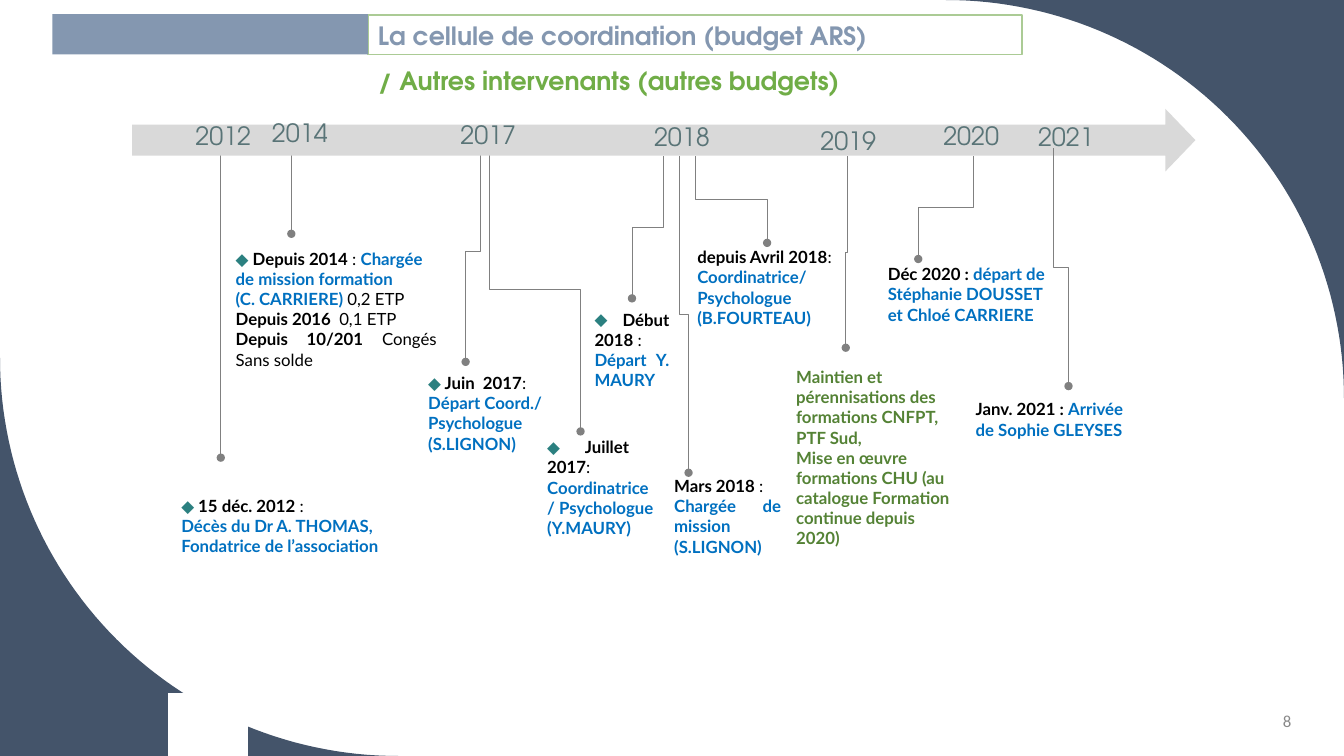
from dataclasses import dataclass
from enum import Enum
from math import cos, pi, sin

from lxml.etree import SubElement
from pptx import Presentation
from pptx.dml.color import RGBColor as RGB
from pptx.enum.shapes import MSO_CONNECTOR as Link, MSO_SHAPE as Preset
from pptx.enum.text import MSO_ANCHOR as Anchor, MSO_AUTO_SIZE as Fit, PP_ALIGN as Align
from pptx.oxml.ns import qn
from pptx.shapes.autoshape import Shape
from pptx.shapes.shapetree import SlideShapes
from pptx.util import Pt


class Tone(Enum):
    LABEL = ("000000", True)
    PLAIN = ("000000", False)
    PERSON = ("0070C0", True)
    TRAINING = ("548235", True)


@dataclass(frozen=True)
class Theme:
    navy: str = "44546A"
    slate: str = "8497B0"
    green: str = "70AD47"
    pale_green: str = "ABCB95"
    arrow: str = "D9D9D9"
    leader: str = "808080"
    year: str = "597477"
    number: str = "898989"
    bullet: str = "2B8080"
    white: str = "FFFFFF"
    display_font: str = "TeX Gyre Adventor"
    note_font: str = "Lato"
    number_font: str = "Calibri"
    heading_size: float = 18
    note_size: float = 12


@dataclass(frozen=True)
class Box:
    left: float
    top: float
    width: float
    height: float

    def lengths(self) -> tuple[int, ...]:
        return tuple(Pt(v) for v in (self.left, self.top, self.width, self.height))


@dataclass(frozen=True)
class Line:
    pieces: tuple[tuple[str, Tone], ...]
    bullet: bool = False
    align: Align = Align.JUSTIFY


@dataclass(frozen=True)
class Note:
    box: Box
    lines: tuple[Line, ...]
    anchor: Anchor = Anchor.MIDDLE
    filled: bool = False


@dataclass(frozen=True)
class Year:
    text: str
    left: float
    top: float


@dataclass(frozen=True)
class Leader:
    x: float
    y: float
    end_x: float
    end_y: float


THEME = Theme()
WIDTH, HEIGHT, RADIUS = 960, 540, 284.4
LABEL, PLAIN, PERSON, TRAINING = Tone.LABEL, Tone.PLAIN, Tone.PERSON, Tone.TRAINING

LEADERS = (
    Leader(485.3, 111.6, 491.8, 337.7),
    Leader(496.8, 111.6, 547.9, 173.5),
    Leader(349.9, 105.8, 414.7, 308.2),
    Leader(343.4, 100.1, 332.6, 258.5),
    Leader(208.1, 100.1, 208.1, 167),
    Leader(157.7, 103, 157.7, 326.9),
    Leader(473.8, 111.6, 451.4, 213.1),
    Leader(695.5, 111.6, 655.9, 185),
    Leader(605.5, 111.6, 604.1, 248.4),
)
LEADER_2021 = Leader(752.4, 105.8, 763.2, 275.8)

YEARS = (
    Year("2012", 132.5, 82.1), Year("2014", 187.2, 80.6), Year("2017", 321.8, 81.4),
    Year("2018", 460.1, 82.8), Year("2019", 578.9, 85.7), Year("2020", 666.7, 82.1),
    Year("2021", 734.4, 82.8),
)

NOTES = (
    Note(Box(161.3, 171.4, 157.7, 98.6), (
        Line(((" Depuis 2014 ", LABEL), (": ", PLAIN), ("Chargée ", PERSON)), bullet=True),
        Line((("de mission formation ", PERSON),)),
        Line((("(C. CARRIERE) ", PERSON), ("0,2 ETP", PLAIN))),
        Line((("Depuis 2016  ", LABEL), ("0,1 ETP", PLAIN))),
        Line((("Depuis 10/201 ", LABEL), ("Congés Sans solde", PLAIN))))),
    Note(Box(122.4, 332.6, 174.2, 86.4), (
        Line(((" 15 déc. 2012 ", LABEL), (": ", PLAIN)), bullet=True),
        Line((("Décès du Dr A. THOMAS, ", PERSON),)),
        Line((("Fondatrice de l’association", PERSON),))), filled=True),
    Note(Box(298.8, 264.2, 129.6, 61.9), (
        Line(((" Juin  2017", LABEL), (": ", PLAIN)), bullet=True),
        Line((("Départ Coord./ Psychologue", PERSON),), align=Align.LEFT),
        Line((("(S.LIGNON)", PERSON),)))),
    Note(Box(383.8, 326.9, 90.7, 42.5), (
        Line(((" Juillet  2017", LABEL), (": ", PLAIN)), bullet=True),
        Line((("Coordinatrice / Psychologue", PERSON),)),
        Line((("(Y.MAURY)", PERSON),)))),
    Note(Box(491, 157, 130.3, 96.5), (
        Line((("depuis Avril 2018", LABEL), (": ", PLAIN))),
        Line((("Coordinatrice/ Psychologue", PERSON),)),
        Line((("(B.FOURTEAU)", PERSON),)))),
    Note(Box(417.6, 218.9, 67.7, 61.9), (
        Line(((" Début 2018 ", LABEL), (": ", PLAIN)), bullet=True),
        Line((("Départ  Y. MAURY", PERSON),)))),
    Note(Box(474.5, 337.7, 90.7, 61.9), (
        Line((("Mars 2018 ", LABEL), (": ", PLAIN))),
        Line((("Chargée de mission", PERSON),)),
        Line((("(S.LIGNON)", PERSON),)))),
    Note(Box(627.1, 185, 133.2, 51.1), (
        Line((("Déc 2020 : ", LABEL), ("départ de Stéphanie DOUSSET et Chloé CARRIERE", PERSON)),
             align=Align.LEFT),), Anchor.TOP),
    Note(Box(689.8, 281.5, 133.2, 36.7), (
        Line((("Janv. 2021 : ", LABEL), ("Arrivée de Sophie GLEYSES", PERSON)),
             align=Align.LEFT),), Anchor.TOP),
    Note(Box(561.6, 258.5, 128.2, 159.8), (
        Line((("Maintien et pérennisations des formations CNFPT, PTF Sud,", TRAINING),),
             align=Align.LEFT),
        Line((("Mise en œuvre formations CHU (au catalogue Formation continue depuis 2020)",
               TRAINING),), align=Align.LEFT)), Anchor.TOP, filled=True),
)


def paint(shape: Shape, fill: str | None, outline: str | None = None) -> None:
    shape.shadow.inherit = False
    if fill:
        shape.fill.solid()
        shape.fill.fore_color.rgb = RGB.from_string(fill)
    else:
        shape.fill.background()
    if outline:
        shape.line.color.rgb = RGB.from_string(outline)
        shape.line.width = Pt(1)
    else:
        shape.line.fill.background()


def draw_block(shapes: SlideShapes, preset: Preset, box: Box, fill: str | None,
               outline: str | None = None) -> Shape:
    block = shapes.add_shape(preset, *box.lengths())
    paint(block, fill, outline)
    return block


def style(run, font: str, size: float, colour: str, bold: bool = False) -> None:
    run.font.name, run.font.size, run.font.bold = font, Pt(size), bold
    run.font.color.rgb = RGB.from_string(colour)


def draw_corner(shapes: SlideShapes, x: float, y: float, side: int) -> None:
    centre_x, centre_y = x - side * RADIUS, y + side * RADIUS
    steps = 60
    arc = [(Pt(centre_x + side * RADIUS * sin(pi / 2 * i / steps)),
            Pt(centre_y - side * RADIUS * cos(pi / 2 * i / steps))) for i in range(steps + 1)]
    builder = shapes.build_freeform(Pt(x), Pt(y))
    builder.add_line_segments(arc, close=True)
    paint(builder.convert_to_shape(), THEME.navy)


def draw_leader(shapes: SlideShapes, leader: Leader) -> None:
    shift, drop = leader.end_x - leader.x, leader.end_y - leader.y
    if shift == 0:
        link = shapes.add_connector(Link.STRAIGHT, Pt(leader.x), Pt(leader.y),
                                    Pt(leader.end_x), Pt(leader.end_y))
    else:
        mid_x, mid_y = leader.x + shift / 2, leader.y + drop / 2
        reach = drop / 2 if shift > 0 else -drop / 2
        rise = abs(shift) / 2
        link = shapes.add_connector(Link.ELBOW, Pt(mid_x + reach), Pt(mid_y - rise),
                                    Pt(mid_x - reach), Pt(mid_y + rise))
        turn = 270 if shift > 0 else 90
        link._element.spPr.find(qn("a:xfrm")).set("rot", str(turn * 60000))
    link.line.color.rgb = RGB.from_string(THEME.leader)
    link.line.width = Pt(0.5)
    SubElement(link.line._get_or_add_ln(), qn("a:tailEnd"), type="oval")
    SubElement(link._element.spPr, qn("a:effectLst"))


def draw_label(shapes: SlideShapes, box: Box, text: str, font: str, size: float, colour: str,
               align: Align = Align.LEFT, wrap: bool = False) -> None:
    frame = shapes.add_textbox(*box.lengths()).text_frame
    frame.text = text
    frame.word_wrap = wrap
    frame.vertical_anchor = Anchor.MIDDLE if wrap else Anchor.TOP
    frame.paragraphs[0].alignment = align
    style(frame.paragraphs[0].runs[0], font, size, colour)


def draw_note(shapes: SlideShapes, note: Note) -> None:
    if note.filled:
        holder = draw_block(shapes, Preset.RECTANGLE, note.box, THEME.white)
    else:
        holder = shapes.add_textbox(*note.box.lengths())
    frame = holder.text_frame
    frame.word_wrap, frame.vertical_anchor = True, note.anchor
    for index, line in enumerate(note.lines):
        paragraph = frame.add_paragraph() if index else frame.paragraphs[0]
        paragraph.alignment = line.align
        if line.bullet:
            props = paragraph._p.get_or_add_pPr()
            SubElement(SubElement(props, qn("a:buClr")), qn("a:srgbClr"), val=THEME.bullet)
            SubElement(props, qn("a:buFont"), typeface=THEME.note_font)
            SubElement(props, qn("a:buChar"), char="◆")
        for text, tone in line.pieces:
            run = paragraph.add_run()
            run.text = text
            style(run, THEME.note_font, THEME.note_size, *tone.value)


def write_title(title: Shape) -> None:
    title.left, title.top, title.width, title.height = Box(262.8, 10.8, 465.8, 64.1).lengths()
    frame = title.text_frame
    frame.text = "La cellule de coordination (budget ARS)\n/ Autres intervenants (autres budgets)"
    frame.word_wrap, frame.auto_size, frame.vertical_anchor = True, Fit.NONE, Anchor.TOP
    for paragraph, colour in zip(frame.paragraphs, (THEME.slate, THEME.green)):
        paragraph.alignment = Align.LEFT
        paragraph.space_before, paragraph.space_after = Pt(0), Pt(10.8)
        style(paragraph.runs[0], THEME.display_font, THEME.heading_size, colour, True)


def main() -> None:
    deck = Presentation()
    deck.slide_width, deck.slide_height = Pt(WIDTH), Pt(HEIGHT)
    slide = deck.slides.add_slide(deck.slide_layouts[5])
    shapes = slide.shapes
    write_title(shapes.title)
    draw_corner(shapes, WIDTH, 0, 1)
    draw_corner(shapes, 0, HEIGHT, -1)
    for leader in LEADERS:
        draw_leader(shapes, leader)
    draw_block(shapes, Preset.RECTANGLE, Box(262.8, 10.8, 467.3, 28.1), None, THEME.pale_green)
    draw_block(shapes, Preset.RECTANGLE, Box(37.4, 10.1, 225.4, 28.8), THEME.slate)
    arrow = draw_block(shapes, Preset.RIGHT_ARROW, Box(94.3, 77.8, 759.6, 44.6), THEME.arrow)
    arrow.adjustments[1] = 0.48
    draw_block(shapes, Preset.RECTANGLE, Box(120.2, 495.4, 56.2, 44.6), THEME.white, THEME.white)
    draw_label(shapes, Box(799.2, 500.4, 130.3, 28.8), "8", THEME.number_font, THEME.note_size,
               THEME.number, Align.RIGHT, True)
    for year in YEARS:
        draw_label(shapes, Box(year.left, year.top, 54.7, 28.8), year.text, THEME.display_font,
                   THEME.heading_size, THEME.year)
    for note in NOTES:
        draw_note(shapes, note)
    draw_leader(shapes, LEADER_2021)
    deck.save("out.pptx")


if __name__ == "__main__":
    main()
